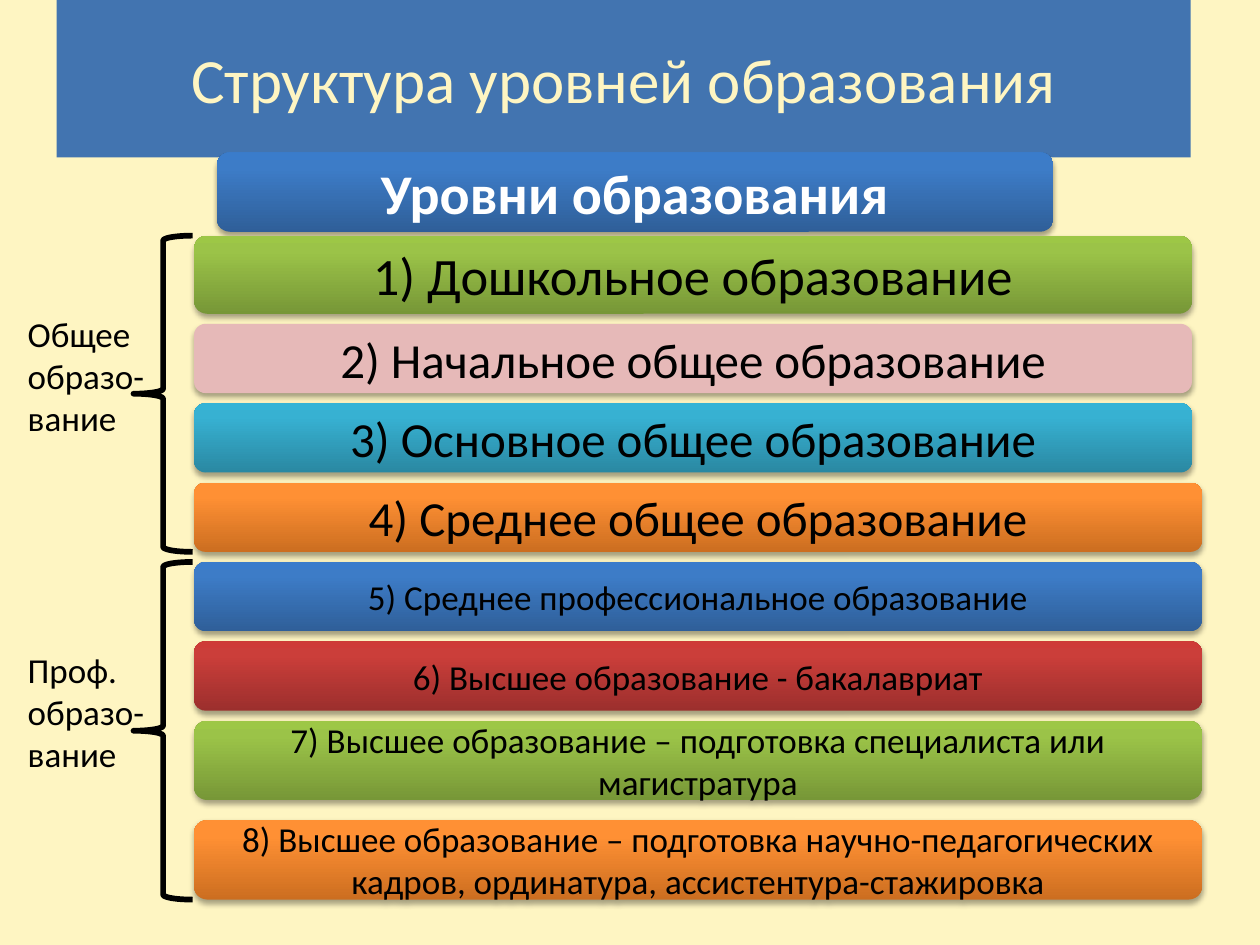
from copy import deepcopy

from lxml import etree
from pptx import Presentation
from pptx.dml.color import RGBColor
from pptx.enum.shapes import MSO_SHAPE
from pptx.enum.text import MSO_ANCHOR, MSO_AUTO_SIZE, PP_ALIGN
from pptx.oxml.ns import qn
from pptx.util import Inches, Pt

ROUND_RECT, LEFT_BRACE = MSO_SHAPE.ROUNDED_RECTANGLE, MSO_SHAPE.LEFT_BRACE
MIDDLE, TOP = MSO_ANCHOR.MIDDLE, MSO_ANCHOR.TOP
CENTER, LEFT = PP_ALIGN.CENTER, PP_ALIGN.LEFT
NO_FIT = MSO_AUTO_SIZE.NONE

FONT = "Calibri"
CREAM = RGBColor(0xFE, 0xF5, 0xC2)
TITLE_BLUE = RGBColor(0x42, 0x74, 0xB0)
BLACK = RGBColor(0, 0, 0)
WHITE = RGBColor(0xFF, 0xFF, 0xFF)
PINK = [RGBColor(0xE6, 0xB9, 0xB8)]
BLUE = [RGBColor(0x2F, 0x5F, 0x99), RGBColor(0x3D, 0x7C, 0xC7), RGBColor(0x3A, 0x7C, 0xCB)]
GREEN = [RGBColor(0x77, 0x97, 0x37), RGBColor(0x9B, 0xC3, 0x48), RGBColor(0x9D, 0xC7, 0x46)]
TEAL = [RGBColor(0x2A, 0x88, 0xA2), RGBColor(0x37, 0xB1, 0xD2), RGBColor(0x34, 0xB4, 0xD6)]
ORANGE = [RGBColor(0xCC, 0x6E, 0x20), RGBColor(0xFF, 0x90, 0x34), RGBColor(0xFF, 0x91, 0x36)]
RED = [RGBColor(0x9C, 0x2F, 0x2D), RGBColor(0xCB, 0x3E, 0x3A), RGBColor(0xCE, 0x3B, 0x37)]
STOPS = (0, 0.8, 1)

GAP = 0.08
LEVELS = [
    ("1) Дошкольное образование", GREEN, 30, 7.92, 0.62, GAP),
    ("2) Начальное общее образование", PINK, 28, 7.92, 0.55, GAP),
    ("3) Основное общее образование", TEAL, 28, 7.92, 0.55, GAP),
    ("4) Среднее общее образование", ORANGE, 28, 8, 0.55, GAP),
    ("5) Среднее профессиональное образование", BLUE, 20, 8, 0.55, GAP),
    ("6) Высшее образование - бакалавриат", RED, 20, 8, 0.55, GAP),
    ("7) Высшее образование – подготовка специалиста или магистратура",
     GREEN, 20, 8, 0.63, 2 * GAP),
    ("8) Высшее образование – подготовка научно-педагогических кадров, "
     "ординатура, ассистентура-стажировка", ORANGE, 20, 8, 0.63, 0),
]
GENERAL_COUNT = 4
GROUP_LABELS = [("Общее", "образо-", "вание"), ("Проф.", "образо-", "вание")]


def place(sp, box):
    for name, value in zip(("left", "top", "width", "height"), box):
        setattr(sp, name, Inches(value))


def set_font(r, size, color, bold=False):
    for name, value in {"name": FONT, "size": Pt(size), "bold": bold}.items():
        setattr(r.font, name, value)
    r.font.color.rgb = color


def paint(sp, colors):
    if len(colors) == 1:
        sp.fill.solid()
        sp.fill.fore_color.rgb = colors[0]
        return
    sp.fill.gradient()
    sp.fill.gradient_angle = 90
    stop_list = sp._element.spPr.find(qn("a:gradFill")).find(qn("a:gsLst"))
    stop_list.append(deepcopy(stop_list[-1]))
    for stop, position, color in zip(sp.fill.gradient_stops, STOPS, colors):
        stop.position = position
        stop.color.rgb = color


def add_shadow(sp):
    sp.shadow.inherit = False
    effects = sp._element.spPr.find(qn("a:effectLst"))
    shadow = etree.SubElement(effects, qn("a:outerShdw"), blurRad=str(Pt(3.1)),
                              dist=str(Pt(1.8)), dir="5400000", rotWithShape="0")
    color = etree.SubElement(shadow, qn("a:srgbClr"), val=str(BLACK))
    etree.SubElement(color, qn("a:alpha"), val="35000")


def add_title(s, box):
    sp = s.shapes.title
    place(sp, box)
    paint(sp, [TITLE_BLUE])
    tf = sp.text_frame
    for name, value in {"auto_size": NO_FIT, "vertical_anchor": MIDDLE}.items():
        setattr(tf, name, value)
    p = tf.paragraphs[0]
    p.alignment = CENTER
    r = p.add_run()
    r.text = "Структура уровней образования"
    set_font(r, 36, CREAM)


def add_group_labels(s, box):
    sp = s.placeholders[1]
    place(sp, box)
    tf = sp.text_frame
    frame = {"auto_size": NO_FIT, "vertical_anchor": TOP, "margin_top": Inches(0.73)}
    for name, value in frame.items():
        setattr(tf, name, value)
    p = tf.paragraphs[0]
    for group, words in enumerate(GROUP_LABELS):
        for line, word in enumerate(words):
            if group or line:
                p = tf.add_paragraph()
            p.alignment = LEFT
            p.space_before = Pt(120 if group and not line else 0)
            props = p._p.get_or_add_pPr()
            props.set("marL", "0")
            props.set("indent", "0")
            etree.SubElement(props, qn("a:buNone"))
            r = p.add_run()
            r.text = word
            set_font(r, 20, BLACK)


def add_bar(s, box, text, colors, size, color=BLACK, bold=False):
    sp = s.shapes.add_shape(ROUND_RECT, *map(Inches, box))
    paint(sp, colors)
    sp.line.fill.background()
    add_shadow(sp)
    tf = sp.text_frame
    for name, value in {"word_wrap": True, "vertical_anchor": MIDDLE}.items():
        setattr(tf, name, value)
    p = tf.paragraphs[0]
    p.alignment = CENTER
    r = p.add_run()
    r.text = text
    set_font(r, size, color, bold)


def add_levels(s, left, top):
    spans = []
    for text, colors, size, width, height, gap in LEVELS:
        add_bar(s, (left, top, width, height), text, colors, size)
        spans.append((top, top + height))
        top += height + gap
    return spans


def add_brace(s, box):
    sp = s.shapes.add_shape(LEFT_BRACE, *map(Inches, box))
    sp.fill.background()
    sp.line.color.rgb = BLACK
    sp.line.width = Pt(3.25)
    sp.shadow.inherit = False


def main():
    prs = Presentation()
    prs.slide_width, prs.slide_height = Inches(10), Inches(7.5)
    s = prs.slides.add_slide(prs.slide_layouts[1])
    s.background.fill.solid()
    s.background.fill.fore_color.rgb = CREAM
    add_title(s, (0.45, 0, 9, 1.25))
    add_group_labels(s, (0.12, 1.75, 9.38, 4.95))
    add_bar(s, (1.72, 1.21, 6.64, 0.63), "Уровни образования", BLUE, 32, WHITE, True)
    spans = add_levels(s, 1.54, 1.87)
    for group in (spans[:GENERAL_COUNT], spans[GENERAL_COUNT:]):
        top, bottom = group[0][0], group[-1][1]
        add_brace(s, (1.06, top, 0.47, bottom - top))
    prs.save("out.pptx")


if __name__ == "__main__":
    main()
